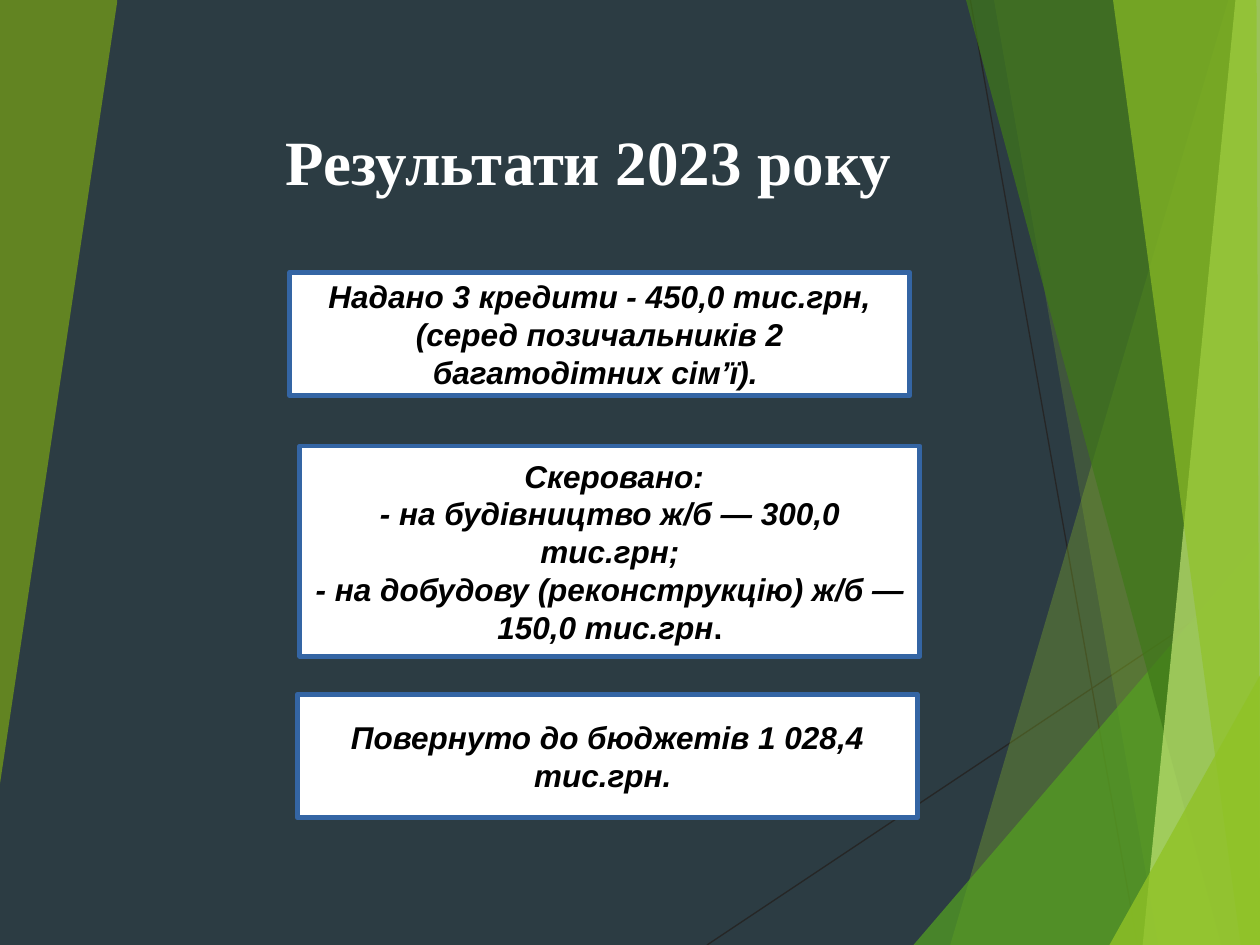
from lxml import etree
from pptx import Presentation
from pptx.dml.color import RGBColor
from pptx.enum.shapes import MSO_CONNECTOR, MSO_SHAPE
from pptx.enum.text import MSO_ANCHOR, PP_ALIGN
from pptx.oxml.ns import qn
from pptx.util import Pt

STRAIGHT = MSO_CONNECTOR.STRAIGHT
RECTANGLE = MSO_SHAPE.RECTANGLE
MIDDLE = MSO_ANCHOR.MIDDLE
CENTER = PP_ALIGN.CENTER


def rgb(value):
    return RGBColor.from_string(value)


def set_font(font, name, size, color, italic):
    font.name, font.size = name, Pt(size)
    font.bold, font.italic = True, italic
    font.color.rgb = rgb(color)


prs = Presentation()
prs.slide_width, prs.slide_height = Pt(720), Pt(540)
slide = prs.slides.add_slide(prs.slide_layouts[6])
slide.background.fill.solid()
slide.background.fill.fore_color.rgb = rgb("2C3C43")

# Thin lines behind the facets
for ends in [(404, 540, 720.5, 329), (554.5, 0, 650, 540)]:
    ray = slide.shapes.add_connector(STRAIGHT, *[Pt(v) for v in ends])
    ray.line.color.rgb = rgb("262626")
    ray.line.width = Pt(0.75)
    etree.SubElement(ray._element.spPr, qn("a:effectLst"))

# Translucent facets: colour, opacity in percent, corners
facets = [
    ("90C226", 30, [(701.5, 0), (543, 540), (720, 540), (720, 0)]),
    ("90C226", 20, [(567.5, 0), (661.5, 540), (720, 540), (720, 0)]),
    ("54A021", 72, [(522.5, 540), (720, 309), (720, 540)]),
    ("3F7819", 70, [(552, 0), (697.5, 540), (720, 540), (720, 0)]),
    ("C0E474", 70, [(706.5, 0), (653, 540), (720, 540), (720, 0)]),
    ("90C226", 65, [(636, 0), (709, 540), (719.5, 540), (718.5, 0)]),
    ("90C226", 80, [(634.5, 540), (720, 385.5), (720, 540)]),
    ("6C911D", 85, [(0, 0), (67, 0), (67, 1), (0, 448)]),
]
for color, opacity, corners in facets:
    outline = slide.shapes.build_freeform(*corners[0], scale=Pt(1))
    outline.add_line_segments(corners[1:], close=True)
    facet = outline.convert_to_shape()
    facet.shadow.inherit = False
    facet.fill.solid()
    facet.fill.fore_color.rgb = rgb(color)
    facet.line.fill.background()
    tint = facet._element.spPr.find(qn("a:solidFill"))[0]
    etree.SubElement(tint, qn("a:alpha"), val=str(opacity * 1000))

# Title
title = slide.shapes.add_textbox(Pt(156.2), Pt(66.2), Pt(382.3), Pt(61.2))
title.text_frame.word_wrap = True
heading = title.text_frame.paragraphs[0]
heading.text = "Результати 2023 року"
set_font(heading.font, "Times New Roman", 36, "FFFFFF", False)

# Result boxes: left, top, height, paragraphs as lists of runs
results = [
    (165.6, 155.5, 70.6, [
        ["Надано 3 кредити - 450,0 тис.грн, (серед позичальників 2 багатодітних сім’ї). "],
    ]),
    (171.4, 254.9, 120.2, [
        [" Скеровано:"],
        ["- на будівництво ж/б — 300,0 тис.грн;"],
        ["- на добудову (реконструкцію) ж/б — 150,0 тис.грн", "."],
    ]),
    (169.9, 396.7, 70.6, [
        ["Повернуто до бюджетів 1 028,4 тис.грн. "],
    ]),
]
for left, top, height, paragraphs in results:
    box = slide.shapes.add_shape(RECTANGLE, Pt(left), Pt(top), Pt(354.2), Pt(height))
    box.shadow.inherit = False
    box.fill.solid()
    box.fill.fore_color.rgb = rgb("FFFFFF")
    box.line.color.rgb = rgb("3465A4")
    box.line.width = Pt(2.83)
    frame = box.text_frame
    frame.word_wrap = True
    frame.vertical_anchor = MIDDLE
    frame.margin_left = frame.margin_right = Pt(8.5)
    frame.margin_top = frame.margin_bottom = Pt(5)
    for i, runs in enumerate(paragraphs):
        paragraph = frame.add_paragraph() if i else frame.paragraphs[0]
        paragraph.alignment = CENTER
        set_font(paragraph.font, "Arial", 18, "000000", True)
        for j, words in enumerate(runs):
            run = paragraph.add_run()
            run.text = words
            if j:  # the closing full stop is upright
                run.font.italic = False

prs.save("out.pptx")
